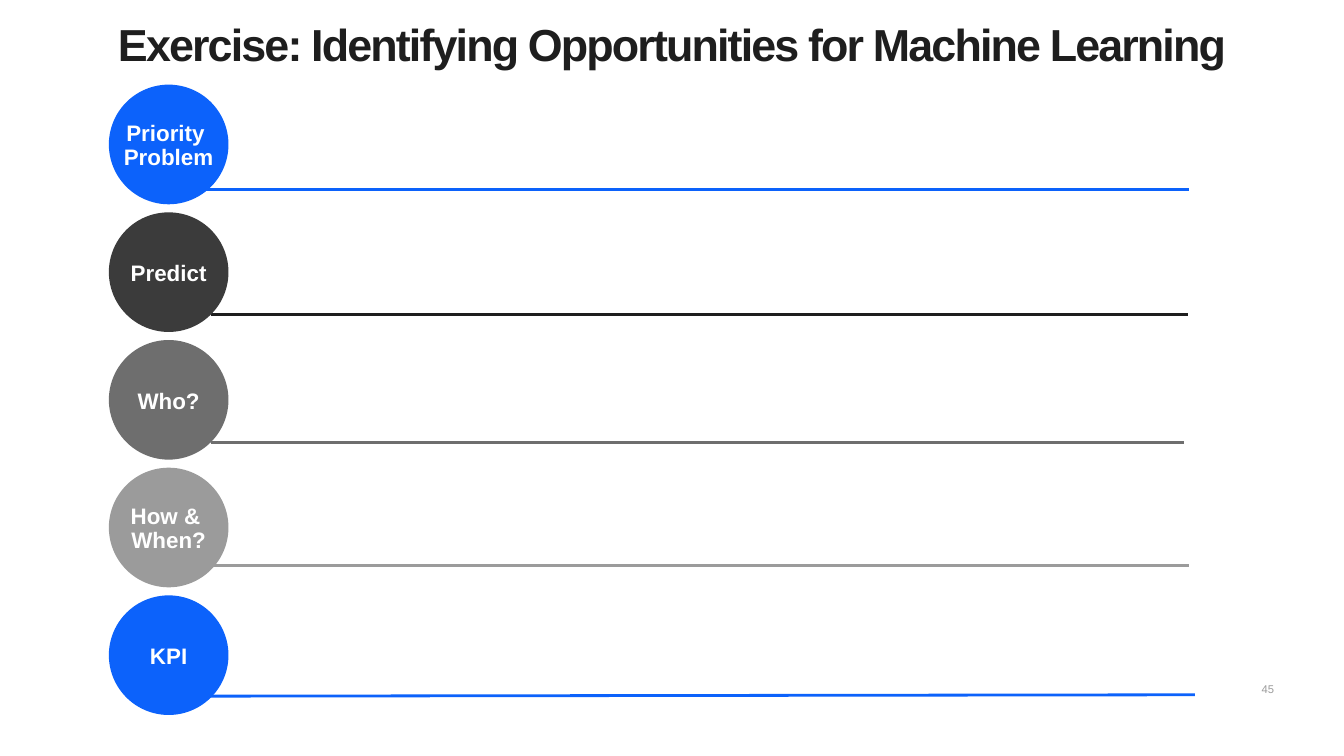
from dataclasses import dataclass

from lxml import etree
from pptx import Presentation
from pptx.dml.color import RGBColor
from pptx.enum.shapes import MSO_CONNECTOR, MSO_SHAPE
from pptx.enum.text import MSO_ANCHOR, PP_ALIGN
from pptx.oxml.ns import qn
from pptx.util import Inches, Pt

STRAIGHT = MSO_CONNECTOR.STRAIGHT
OVAL = MSO_SHAPE.OVAL
TOP, MIDDLE, BOTTOM = MSO_ANCHOR.TOP, MSO_ANCHOR.MIDDLE, MSO_ANCHOR.BOTTOM
CENTER, RIGHT = PP_ALIGN.CENTER, PP_ALIGN.RIGHT

WHITE = RGBColor(0xFF, 0xFF, 0xFF)
BLUE = RGBColor(0x0C, 0x62, 0xFB)
BLACK = RGBColor(0x1E, 0x1E, 0x1E)
CHARCOAL = RGBColor(0x3B, 0x3B, 0x3B)
GRAY = RGBColor(0x6E, 0x6E, 0x6E)
SILVER = RGBColor(0x9B, 0x9B, 0x9B)

FONT = "Arial"
SLIDE_WIDTH = Inches(10)
SLIDE_HEIGHT = SLIDE_WIDTH * 9 // 16
CIRCLE_LEFT, CIRCLE_TOP = 0.81, 0.63
CIRCLE_SIZE, CIRCLE_PITCH = 0.89, 0.95


@dataclass
class Step:
    label: str
    fill: RGBColor
    line_color: RGBColor
    line_start: tuple[float, float]
    line_end: tuple[float, float]


STEPS = [
    Step("Priority \nProblem", BLUE, BLUE, (1.43, 1.41), (8.85, 1.41)),
    Step("Predict", CHARCOAL, BLACK, (1.57, 2.34), (8.84, 2.34)),
    Step("Who?", GRAY, GRAY, (1.57, 3.29), (8.81, 3.29)),
    Step("How & \nWhen?", SILVER, SILVER, (1.43, 4.21), (8.85, 4.21)),
    Step("KPI", BLUE, BLUE, (1.55, 5.18), (8.89, 5.17)),
]


def write_text(shape, text: str, size: float, color: RGBColor, bold: bool = True,
               align=CENTER, anchor=MIDDLE, line_spacing: float = 0.9,
               wrap: bool = True) -> None:
    """Fill a shape with uniformly formatted text and no insets."""
    frame = shape.text_frame
    frame.margin_left = frame.margin_right = 0
    frame.margin_top = frame.margin_bottom = 0
    frame.word_wrap = wrap
    frame.vertical_anchor = anchor
    frame.text = text
    for paragraph in frame.paragraphs:
        paragraph.alignment = align
        paragraph.line_spacing = line_spacing
        for run in paragraph.runs:
            run.font.name = FONT
            run.font.size = Pt(size)
            run.font.bold = bold
            run.font.color.rgb = color


def add_title(slide) -> None:
    title = slide.shapes.add_textbox(Inches(0.25), Inches(0.17), Inches(9.5), Inches(0.46))
    write_text(title, "Exercise: Identifying Opportunities for Machine Learning",
               24, BLACK, anchor=TOP)
    # Letter spacing in hundredths of a point
    title.text_frame.paragraphs[0].runs[0].font._element.set("spc", "-100")


def add_page_number(slide) -> None:
    number = slide.shapes.add_textbox(Inches(8.9), Inches(4.99), Inches(0.58), Inches(0.19))
    write_text(number, "45", 6, SILVER, bold=False, align=RIGHT, anchor=BOTTOM,
               line_spacing=1.5)


def add_answer_line(slide, step: Step) -> None:
    ends = [Inches(value) for value in (*step.line_start, *step.line_end)]
    line = slide.shapes.add_connector(STRAIGHT, *ends)
    line.line.color.rgb = step.line_color
    line.line.width = Pt(1.5)
    etree.SubElement(line._element.spPr, qn("a:effectLst"))


def add_circle(slide, step: Step, top: float) -> None:
    circle = slide.shapes.add_shape(OVAL, Inches(CIRCLE_LEFT), Inches(top),
                                    Inches(CIRCLE_SIZE), Inches(CIRCLE_SIZE))
    circle.shadow.inherit = False
    circle.fill.solid()
    circle.fill.fore_color.rgb = step.fill
    circle.line.fill.background()
    write_text(circle, step.label, 12, WHITE, wrap=False)
    circle.text_frame.margin_top = Inches(0.03)


def main() -> None:
    presentation = Presentation()
    presentation.slide_width = SLIDE_WIDTH
    presentation.slide_height = SLIDE_HEIGHT
    slide = presentation.slides.add_slide(presentation.slide_layouts[6])

    add_title(slide)
    add_page_number(slide)
    for index, step in enumerate(STEPS):
        add_answer_line(slide, step)
        add_circle(slide, step, CIRCLE_TOP + index * CIRCLE_PITCH)

    presentation.save("out.pptx")


if __name__ == "__main__":
    main()
